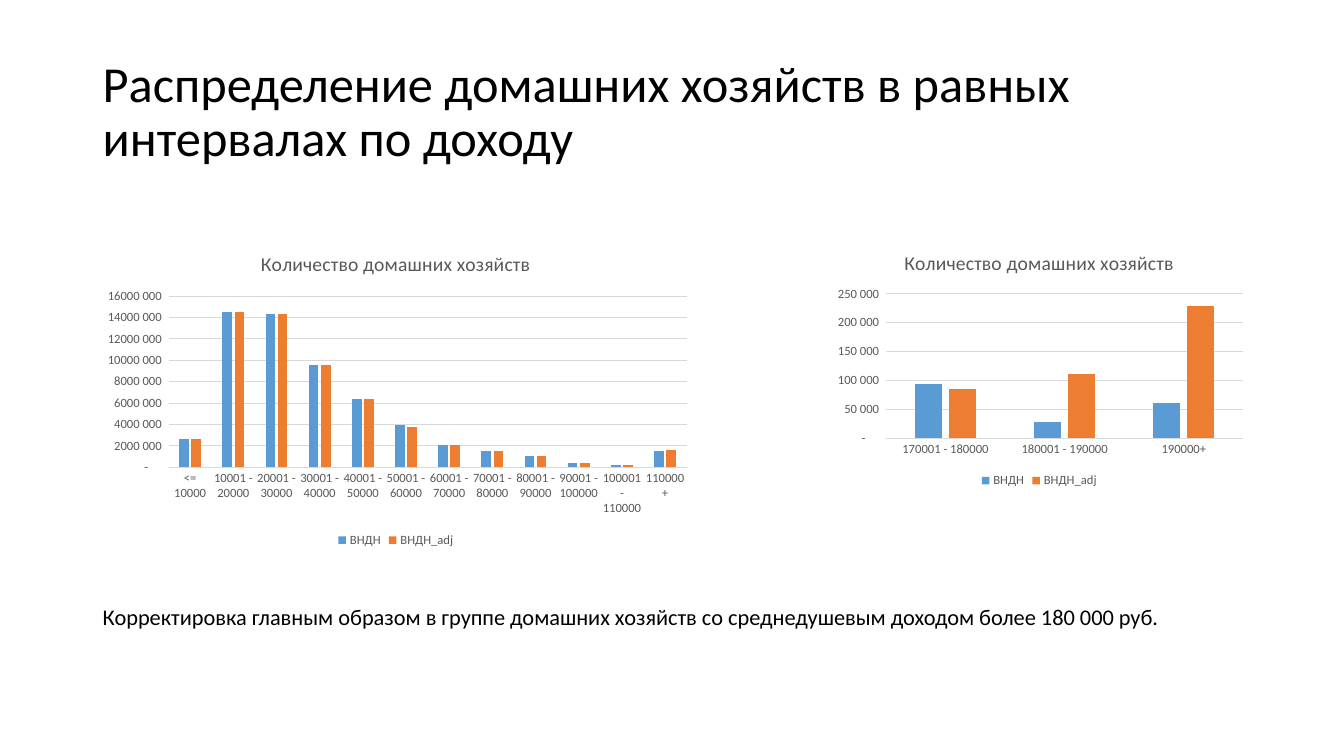
from pptx import Presentation
from pptx import util as u
from pptx.chart.data import CategoryChartData
from pptx.dml.color import RGBColor
from pptx.enum import chart as ch
from pptx.enum import text

BLACK = RGBColor(0x00, 0x00, 0x00)
GREY = RGBColor(0x59, 0x59, 0x59)
LIGHT = RGBColor(0xD9, 0xD9, 0xD9)
BLUE = RGBColor(0x5B, 0x9B, 0xD5)
ORANGE = RGBColor(0xED, 0x7D, 0x31)

LEFT = 2.34
CHART_TOP = 5.92
CHART_TITLE = "Количество домашних хозяйств"
NUMBER_FORMAT = r'_-* #\ ##0_-;\-* #\ ##0_-;_-* "-"??_-;_-'


def intervals(first, last):
    """Income intervals of 10 000, numbered by their lower bound."""
    return [f"{k}0001 - {k + 1}0000" for k in range(first, last + 1)]


class Deck:
    face = "Calibri"

    def __init__(self, prs):
        self.s = prs.slides.add_slide(prs.slide_layouts[6])

    def font(self, font, size, color):
        font.name, font.size, font.bold = self.face, u.Pt(size), False
        font.color.rgb = color

    def text(self, box, content, size, anchor, before=0):
        sp = self.s.shapes.add_textbox(*map(u.Cm, box))
        tf = sp.text_frame
        tf.word_wrap = True
        tf.vertical_anchor = anchor
        p = tf.paragraphs[0]
        p.text = content
        p.line_spacing = 0.9
        p.space_before = u.Pt(before)
        self.font(p.font, size, BLACK)

    def columns(self, box, categories, income, adjusted):
        data = CategoryChartData(number_format=NUMBER_FORMAT)
        data.categories = categories
        data.add_series("ВНДН", income)
        data.add_series("ВНДН_adj", adjusted)
        chart = self.s.shapes.add_chart(
            ch.XL_CHART_TYPE.COLUMN_CLUSTERED, *map(u.Cm, box), data).chart
        self.font(chart.font, 10, BLACK)

        chart.has_title = True
        p = chart.chart_title.text_frame.paragraphs[0]
        p.text = CHART_TITLE
        self.font(p.font, 14, GREY)

        chart.has_legend = True
        chart.legend.position = ch.XL_LEGEND_POSITION.BOTTOM
        chart.legend.include_in_layout = False
        self.font(chart.legend.font, 9, GREY)

        plot = chart.plots[0]
        plot.gap_width, plot.overlap = 219, -27
        plot.vary_by_categories = False
        for series, color in zip(plot.series, (BLUE, ORANGE)):
            series.format.fill.solid()
            series.format.fill.fore_color.rgb = color

        for axis in (chart.category_axis, chart.value_axis):
            axis.major_tick_mark = axis.minor_tick_mark = ch.XL_TICK_MARK.NONE
            self.font(axis.tick_labels.font, 9, GREY)
        value_axis = chart.value_axis
        value_axis.tick_labels.number_format = NUMBER_FORMAT
        value_axis.tick_labels.number_format_is_linked = False
        value_axis.format.line.fill.background()
        for lined in (chart.category_axis, value_axis.major_gridlines):
            lined.format.line.color.rgb = LIGHT
            lined.format.line.width = u.Pt(0.75)


def main():
    prs = Presentation()
    prs.slide_width, prs.slide_height = u.Cm(33.87), u.Cm(19.05)
    deck = Deck(prs)
    deck.text((LEFT, 1.02, 29.21, 3.68),
              "Распределение домашних хозяйств в равных интервалах по доходу",
              36, text.MSO_ANCHOR.MIDDLE)

    millions = [2.6, 14.5, 14.3, 9.6, 6.4, 3.9, 2.1, 1.5, 1, 0.4, 0.2, 1.5]
    millions_adj = [2.6, 14.5, 14.3, 9.6, 6.4, 3.8, 2.1, 1.5, 1, 0.4, 0.2, 1.6]
    deck.columns((LEFT, CHART_TOP, 15.27, 7.98),
                 ["<= 10000", *intervals(1, 10), "110000+"],
                 [round(v * 1e6) for v in millions],
                 [round(v * 1e6) for v in millions_adj])
    deck.columns((20.83, CHART_TOP, 10.72, 6.48),
                 [*intervals(17, 18), "190000+"],
                 [94000, 28000, 61000], [86000, 112000, 229000])

    deck.text((LEFT, 15.14, 28.85, 1.35),
              "Корректировка главным образом в группе домашних хозяйств "
              "со среднедушевым доходом более 180 000 руб.",
              16, text.MSO_ANCHOR.TOP, before=10)
    prs.save("out.pptx")


if __name__ == "__main__":
    main()
